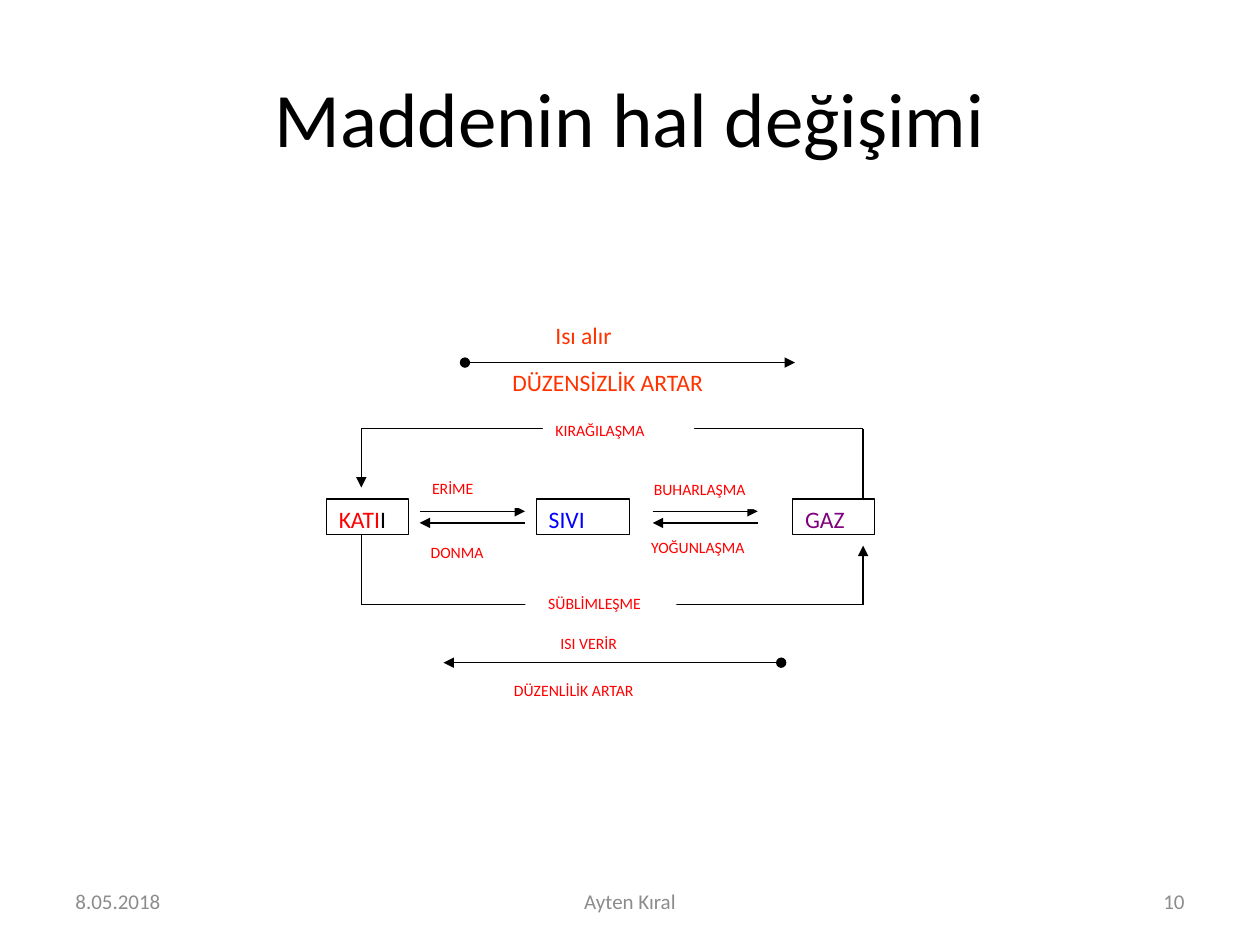
from pptx import Presentation
from pptx.util import Pt
from pptx.dml.color import RGBColor
from pptx.enum.shapes import MSO_SHAPE, MSO_CONNECTOR
from pptx.enum.text import PP_ALIGN, MSO_ANCHOR
from lxml.etree import SubElement
from pptx.oxml.ns import qn

THEME = dict(
    font="Calibri", black="000000", white="FFFFFF", red="FF0000",
    blue="0000FF", purple="800080", orange="FF3300", gray="8C8C8C",
    title=44, state=13.5, label=9, foot=12, line=0.75,
)

TITLE = "Maddenin hal değişimi"
FOOTS = [
    ("8.05.2018", 36, 168, PP_ALIGN.LEFT),
    ("Ayten Kıral", 246, 228, PP_ALIGN.CENTER),
    ("10", 516, 168, PP_ALIGN.RIGHT),
]
STATES = [
    ([("KATI", "red"), ("I", "black")], 186.5, 46.8),
    ([("SIVI", "blue")], 306.5, 53.3),
    ([("GAZ", "purple")], 453, 46.8),
]
STEPS = [
    ("ERİME", 239.8, 270, 59.8),
    ("BUHARLAŞMA", 366.5, 270.7, 79.9),
    ("DONMA", 239, 306.7, 59.8),
    ("YOĞUNLAŞMA", 365, 303.8, 79.9),
]
PAIRS = [(239.8, 300), (373, 433)]
LOOPS = [
    ("SÜBLİMLEŞME", 300.2, 335.5, 86.4, 26.6, 6),
    ("KIRAĞILAŞMA", 310.3, 236.9, 86.4, 20.2, 0),
]
HEATS = [
    ("ISI VERİR", 313.2, 358.6, 113, 13),
    ("DÜZENLİLİK ARTAR", 286.6, 385.2, 126.7, 20.2),
]
GAINS = [
    ("DÜZENSİZLİK ARTAR", 285.8, 206.6, 148.3, MSO_ANCHOR.MIDDLE),
    ("Isı alır", 310.3, 180, 76.3, MSO_ANCHOR.TOP),
]
LEFT, RIGHT = 206.5, 493.2
ROOF, FLOOR = 245, 345.6
TOP, TALL = 285.1, 20.2

deck = Presentation()
deck.slide_width, deck.slide_height = Pt(720), Pt(540)
slide = deck.slides.add_slide(deck.slide_layouts[5])
shapes = slide.shapes


def color(name):
    return RGBColor.from_string(THEME[name])


def write(shape, runs, size="label", tint="red", align=PP_ALIGN.LEFT,
          anchor=MSO_ANCHOR.TOP, indent=0):
    frame = shape.text_frame
    frame.word_wrap = True
    frame.vertical_anchor = anchor
    frame.margin_left = frame.margin_right = Pt(7.2)
    frame.margin_top = frame.margin_bottom = Pt(3.6)
    para = frame.paragraphs[0]
    para.alignment = align
    if indent:
        para._p.get_or_add_pPr().set("indent", str(Pt(indent)))
    for text, hue in [(runs, tint)] if isinstance(runs, str) else runs:
        run = para.add_run()
        run.text = text
        run.font.name = THEME["font"]
        run.font.size = Pt(THEME[size])
        run.font.color.rgb = color(hue)


def place(x, y, wide, tall):
    return Pt(x), Pt(y), Pt(wide), Pt(tall)


def box(runs, x, y, wide, tall, edge=False, **form):
    shape = shapes.add_shape(MSO_SHAPE.RECTANGLE, *place(x, y, wide, tall))
    shape.shadow.inherit = False
    shape.fill.solid()
    shape.fill.fore_color.rgb = color("white")
    if edge:
        shape.line.color.rgb = color("black")
        shape.line.width = Pt(THEME["line"])
    else:
        shape.line.fill.background()
    write(shape, runs, **form)


def note(text, x, y, wide, tall, **form):
    write(shapes.add_textbox(*place(x, y, wide, tall)), text, **form)


def link(x1, y1, x2, y2, head=None, tail=None):
    line = shapes.add_connector(MSO_CONNECTOR.STRAIGHT, *place(x1, y1, x2, y2))
    line.line.color.rgb = color("black")
    line.line.width = Pt(THEME["line"])
    stroke = line.line._get_or_add_ln()
    for tag, kind in (("a:headEnd", head), ("a:tailEnd", tail)):
        if kind:
            SubElement(stroke, qn(tag), type=kind)
    SubElement(line._element.spPr, qn("a:effectLst"))


for text, x, wide, align in FOOTS:
    note(text, x, 500.4, wide, 28.8, size="foot", tint="gray", align=align,
         anchor=MSO_ANCHOR.MIDDLE)

title = shapes.title
title.left, title.top, title.width, title.height = place(36, 21.6, 648, 90)
write(title, TITLE, size="title", tint="black", align=PP_ALIGN.CENTER,
      anchor=MSO_ANCHOR.MIDDLE)

for start, end in PAIRS:
    link(start, 292.2, end, 292.2, tail="triangle")
    link(end, 298.8, start, 298.8, tail="triangle")
for runs, x, wide in STATES:
    box(runs, x, TOP, wide, TALL, edge=True, size="state")
for text, x, y, wide in STEPS:
    box(text, x, y, wide, TALL)

link(LEFT, TOP + TALL, LEFT, FLOOR)
link(LEFT, FLOOR, RIGHT, FLOOR)
link(RIGHT, FLOOR, RIGHT, 311.8, tail="triangle")
link(LEFT, ROOF, RIGHT, ROOF)
link(LEFT, ROOF, LEFT, 278.6, tail="triangle")
link(RIGHT, ROOF, RIGHT, TOP)
for text, x, y, wide, tall, indent in LOOPS:
    box(text, x, y, wide, tall, indent=indent)

link(446.4, 378.7, 253.4, 378.7, head="oval", tail="triangle")
for text, *area in HEATS:
    box(text, *area)

link(265.7, 207.2, 454.3, 207.2, head="oval", tail="triangle")
for text, x, y, wide, anchor in GAINS:
    note(text, x, y, wide, 23.8, size="state", tint="orange", anchor=anchor)

deck.save("out.pptx")
